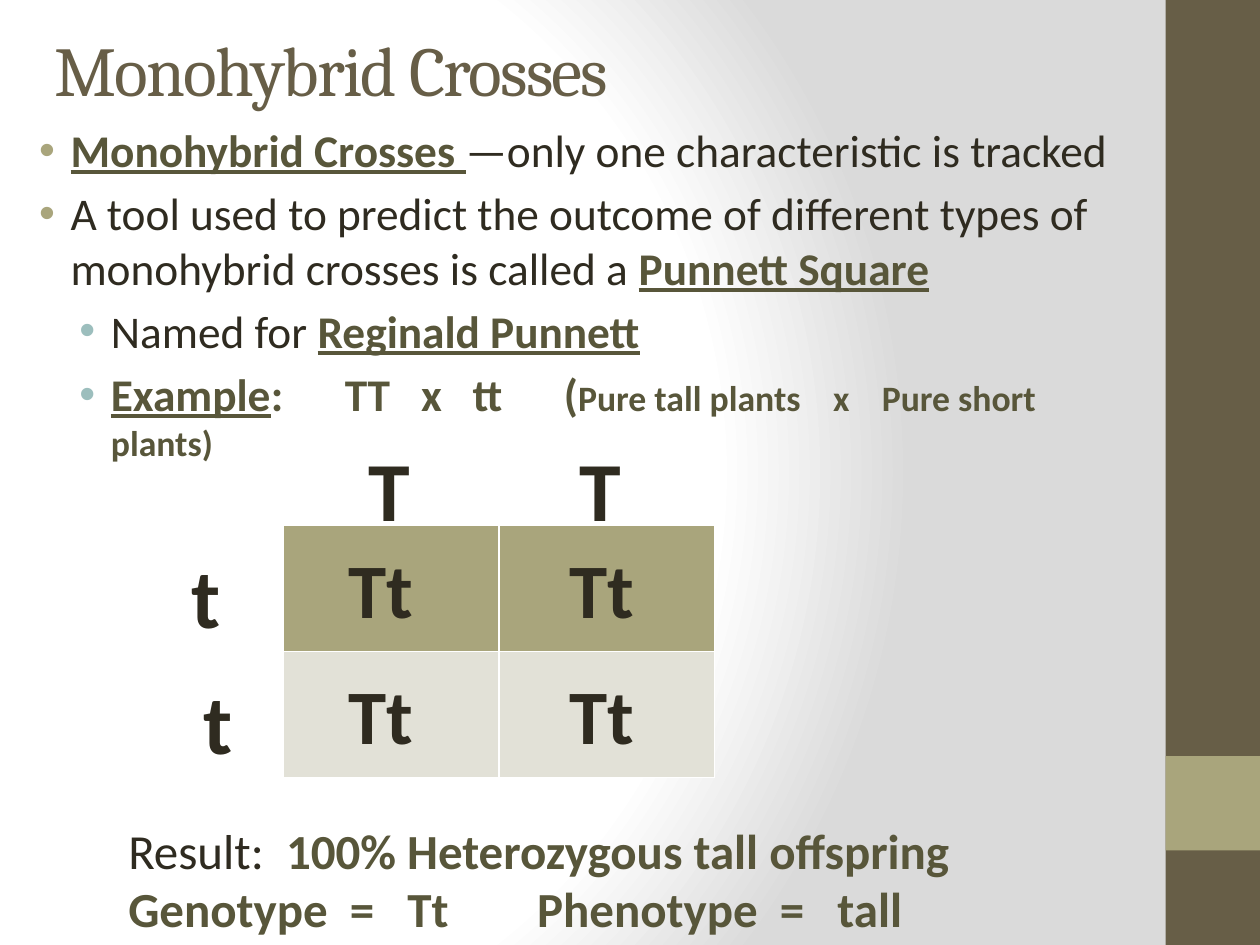
from dataclasses import dataclass

from lxml.etree import SubElement
from pptx import Presentation
from pptx.dml.color import RGBColor
from pptx.enum.shapes import MSO_SHAPE
from pptx.enum.text import MSO_ANCHOR, MSO_AUTO_SIZE, PP_ALIGN
from pptx.oxml import parse_xml
from pptx.oxml.ns import nsdecls, qn
from pptx.util import Inches, Pt


@dataclass(frozen=True)
class Theme:
    """Colours, fonts and type sizes of the slide."""
    brown: str = "675E47"
    olive: str = "A9A57C"
    pale: str = "E2E1D7"
    teal: str = "9CBEBD"
    ink: str = "2F2B20"
    key: str = "58563A"
    white: str = "FFFFFF"
    grey: str = "DADADA"
    heading: str = "Cambria"
    text: str = "Calibri"
    title: float = 40
    body: float = 25.9
    small: float = 20.4
    result: float = 28
    allele: float = 48
    genotype: float = 44
    space_width: float = 0.226


T = Theme()
KEY = dict(color=T.key, bold=True)
TERM = dict(KEY, underline=True)


def add_text(p, text, size=T.body, font=T.text, color=T.ink, bold=False,
             underline=False, spacing=0):
    """Add a formatted run to a paragraph."""
    r = p.add_run()
    r.text = text
    r.font.size, r.font.name = Pt(size), font
    r.font.bold, r.font.underline = bold, underline
    r.font.color.rgb = RGBColor.from_string(color)
    if spacing:
        r.font._element.set("spc", str(round(spacing * 100)))


def gap(count, size=T.body):
    """Return one space widened to the given number of spaces."""
    return " ", dict(KEY, size=size, spacing=(count - 1) * size * T.space_width)


def place(sp, left, top, width, height):
    """Move a shape to a box given in inches."""
    sp.left, sp.top = Inches(left), Inches(top)
    sp.width, sp.height = Inches(width), Inches(height)


def set_background(s):
    """Give the slide its radial gradient."""
    stops = "".join(
        f'<a:gs pos="{pos * 1000}"><a:srgbClr val="{color}"/></a:gs>'
        for pos, color in ((0, T.white), (75, T.white), (100, T.grey)))
    s._element.cSld.insert(0, parse_xml(
        f'<p:bg {nsdecls("p", "a")}><p:bgPr><a:gradFill rotWithShape="1">'
        f'<a:gsLst>{stops}</a:gsLst><a:path path="circle">'
        '<a:fillToRect l="20000" t="50000" r="100000" b="50000"/></a:path>'
        '</a:gradFill><a:effectLst/></p:bgPr></p:bg>'))


def add_side_band(s, left, top, width, height):
    """Draw the side band with its square accent."""
    for y, h, color in ((top, height, T.brown), (top + 6, width, T.olive)):
        sp = s.shapes.add_shape(MSO_SHAPE.RECTANGLE, Inches(left), Inches(y),
                                Inches(width), Inches(h))
        sp.shadow.inherit = False
        sp.fill.solid()
        sp.fill.fore_color.rgb = RGBColor.from_string(color)
        sp.line.fill.background()


def fill_title(s, *box):
    """Fill the title placeholder."""
    sp = s.shapes.title
    place(sp, *box)
    tf = sp.text_frame
    tf.auto_size = MSO_AUTO_SIZE.NONE
    tf.vertical_anchor = MSO_ANCHOR.MIDDLE
    p = tf.paragraphs[0]
    p.alignment = PP_ALIGN.LEFT
    add_text(p, "Monohybrid Crosses", size=T.title, font=T.heading,
             color=T.brown, spacing=-1)


def format_bullet(p, level):
    """Set the level, indent and coloured bullet of a paragraph."""
    p.level = level
    p.space_before = Pt(5)
    pPr = p._p.get_or_add_pPr()
    pPr.set("marL", str(Inches((0.38, 0.7)[level])))
    pPr.set("indent", str(Inches(-0.25)))
    color = SubElement(pPr, qn("a:buClr"))
    SubElement(color, qn("a:srgbClr")).set("val", (T.olive, T.teal)[level])
    SubElement(pPr, qn("a:buFont")).set("typeface", "Arial")
    SubElement(pPr, qn("a:buChar")).set("char", "•")


def fill_body(s, *box):
    """Fill the body placeholder with the bulleted list."""
    small = dict(KEY, size=T.small)
    items = (
        (0, [("Monohybrid Crosses ", TERM),
             ("—only one characteristic is tracked", {})]),
        (0, [("A tool used to predict the outcome of different types of "
              "monohybrid crosses is called a ", {}),
             ("Punnett Square", TERM)]),
        (1, [("Named for ", {}), ("Reginald Punnett", TERM)]),
        (1, [("Example", TERM), (":", KEY), gap(6), ("TT", KEY), gap(3),
             ("x", KEY), gap(3), ("tt", KEY), gap(6), ("(", KEY),
             ("Pure tall plants", small), gap(4, T.small), ("x", small),
             gap(4, T.small), ("Pure short plants)", small)]),
    )
    sp = s.placeholders[1]
    place(sp, *box)
    tf = sp.text_frame
    tf.auto_size = MSO_AUTO_SIZE.NONE
    for i, (level, runs) in enumerate(items):
        p = tf.add_paragraph() if i else tf.paragraphs[0]
        format_bullet(p, level)
        for text, fmt in runs:
            add_text(p, text, **fmt)


def add_label(s, lines, left, top, width, height, wrap=False):
    """Add a text box made of lines of formatted runs."""
    sp = s.shapes.add_textbox(Inches(left), Inches(top), Inches(width), Inches(height))
    tf = sp.text_frame
    tf.word_wrap = wrap
    for i, runs in enumerate(lines):
        p = tf.add_paragraph() if i else tf.paragraphs[0]
        for text, fmt in runs:
            add_text(p, text, **fmt)


def format_cell(cell, color):
    """Fill a cell and give it thin white borders."""
    tcPr = cell._tc.get_or_add_tcPr()
    for side in ("lnL", "lnR", "lnT", "lnB"):
        ln = SubElement(tcPr, qn(f"a:{side}"), w=str(Pt(1)))
        SubElement(SubElement(ln, qn("a:solidFill")), qn("a:srgbClr")).set("val", T.white)
    cell.fill.solid()
    cell.fill.fore_color.rgb = RGBColor.from_string(color)


def add_punnett_square(s, left, top, width, height):
    """Draw the square with its parent alleles and offspring."""
    table = s.shapes.add_table(2, 2, Inches(left), Inches(top),
                               Inches(width), Inches(height)).table
    for row, color in enumerate((T.olive, T.pale)):
        for col in range(2):
            format_cell(table.cell(row, col), color)
    allele = dict(size=T.allele, bold=True)
    genotype = dict(size=T.genotype, bold=True)
    for i in range(2):
        add_label(s, [[("T", allele)]], left + 0.58 + 1.67 * i, top - 0.75, 0.54, 0.91)
        add_label(s, [[("t", allele)]], left - 0.83 + 0.1 * i, top + 0.1 + i, 0.44, 0.91)
        for col in range(2):
            add_label(s, [[("Tt", genotype)]], left + 0.42 + 1.75 * col,
                      top + 0.08 + i, 0.72, 0.84)


def add_result(s, *box):
    """Write the outcome of the cross."""
    plain, key = dict(size=T.result), dict(KEY, size=T.result)
    add_label(s, [
        [("Result:", plain), gap(2, T.result),
         ("100% Heterozygous tall offspring", key)],
        [("Genotype", key), gap(2, T.result), ("=", key), gap(3, T.result),
         ("Tt", key), gap(8, T.result), ("Phenotype", key), gap(2, T.result),
         ("=", key), gap(3, T.result), ("tall", key)],
    ], *box, wrap=True)


def main():
    """Build and save the slide."""
    prs = Presentation()
    prs.slide_width, prs.slide_height = Inches(10), Inches(7.5)
    s = prs.slides.add_slide(prs.slide_layouts[1])
    set_background(s)
    add_side_band(s, 9.25, 0, 0.75, 7.5)
    fill_title(s, 0.33, 0.17, 8.33, 0.75)
    fill_body(s, 0.08, 0.92, 9.08, 2.5)
    add_punnett_square(s, 2.25, 4.17, 3.42, 2)
    add_result(s, 0.92, 6.46, 7.33, 1.04)
    prs.save("out.pptx")


if __name__ == "__main__":
    main()
